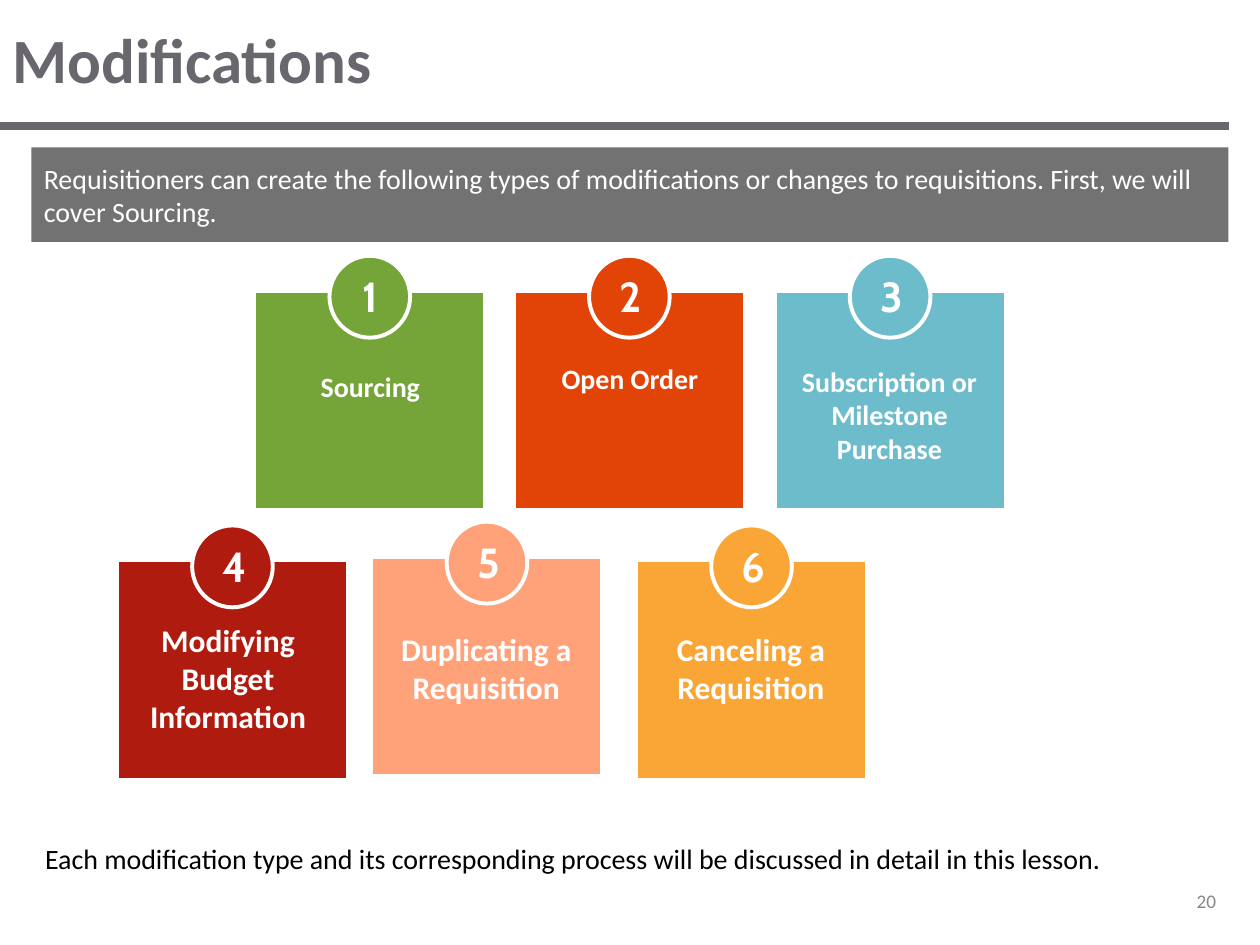
import pptx
import pptx.dml.color
import pptx.enum.shapes
import pptx.enum.text
import pptx.oxml.ns
import pptx.util
from lxml import etree

COLS, ROWS = 100, 75
SHAPE = pptx.enum.shapes.MSO_SHAPE
ALIGN = pptx.enum.text.PP_ALIGN
ANCHOR = pptx.enum.text.MSO_ANCHOR
SLIDE_W, SLIDE_H = pptx.util.Inches(10), pptx.util.Inches(7.5)
GREY = "69676D"
LABEL = {"size": 16, "bold": True, "color": "FFFFFF", "align": ALIGN.CENTER}
BIG_LABEL = {**LABEL, "size": 18}
NUMBER = {**LABEL, "size": 24, "name": "Cabin"}

# number, label, fill, column, row, label column, label row, label format
CARDS = [
    ("1", "Sourcing", "75A439", 20.2, 23.1, 21.1, 28.8, LABEL),
    ("2", "Open Order", "E24307", 40.8, 23.1, 41.7, 28.2, LABEL),
    ("3", "Subscription or Milestone Purchase", "6CBCCB", 61.5, 23.1, 62.3, 28.4, LABEL),
    ("4", "Modifying Budget Information", "B01B10", 9.3, 44.5, 9.8, 48.8, BIG_LABEL),
    ("5", "Duplicating a Requisition", "FFA279", 29.5, 44.2, 30.3, 49.5, BIG_LABEL),
    ("6", "Canceling a Requisition", "FAA636", 50.5, 44.5, 51.3, 49.5, BIG_LABEL),
]


def rgb(value):
    """Turn a hex string into a colour."""
    return pptx.dml.color.RGBColor.from_string(value)


def grid(col, row, width, height):
    """Convert grid columns and rows to slide lengths."""
    return (int(SLIDE_W * col / COLS), int(SLIDE_H * row / ROWS),
            int(SLIDE_W * width / COLS), int(SLIDE_H * height / ROWS))


def write(sp, text, fmt, anchor=ANCHOR.TOP):
    """Put one formatted paragraph into a shape."""
    tf = sp.text_frame
    tf.word_wrap = True
    tf.vertical_anchor = anchor
    p = tf.paragraphs[0]
    p.alignment = fmt.get("align", ALIGN.LEFT)
    r = p.add_run()
    r.text = text
    values = {"name": fmt.get("name", "Calibri"), "size": pptx.util.Pt(fmt["size"]),
              "bold": fmt.get("bold", False)}
    for key, value in values.items():
        setattr(r.font, key, value)
    r.font.color.rgb = rgb(fmt["color"])


def add_text(shapes, box, text, fmt, anchor=ANCHOR.TOP):
    """Add a text box on the grid."""
    write(shapes.add_textbox(*grid(*box)), text, fmt, anchor)


def add_block(shapes, kind, box, fill, line_width=0):
    """Add a filled preset shape with an optional white outline."""
    sp = shapes.add_shape(kind, *grid(*box))
    sp.shadow.inherit = False
    sp.fill.solid()
    sp.fill.fore_color.rgb = rgb(fill)
    if line_width:
        sp.line.color.rgb = rgb("FFFFFF")
        sp.line.width = pptx.util.Pt(line_width)
    else:
        sp.line.fill.background()
    return sp


def add_rule(shapes, row, width):
    """Add the thick horizontal rule below the title."""
    x, y, length, _ = grid(0, row, width, 0)
    cxn = shapes.add_connector(pptx.enum.shapes.MSO_CONNECTOR.STRAIGHT, x, y, x + length, y)
    cxn.line.color.rgb = rgb(GREY)
    cxn.line.width = pptx.util.Pt(5)
    etree.SubElement(cxn.element.spPr, pptx.oxml.ns.qn("a:effectLst"))


def add_card(s, number, label, fill, col, row, label_col, label_row, fmt):
    """Add a grouped card with a numbered badge and a label."""
    shapes = s.shapes.add_group_shape().shapes
    add_block(shapes, SHAPE.RECTANGLE, (col, row, 18.3, 17.4), fill, 2)
    add_block(shapes, SHAPE.OVAL, (col + 5.95, row - 2.8, 6.4, 6.5), fill, 2.25)
    add_text(shapes, (col + 7.4, row - 2.1, 3.6, 5), number, NUMBER)
    add_text(shapes, (label_col, label_row, 16.6, 9.1), label, fmt)


def main():
    """Build and save the slide."""
    prs = pptx.Presentation()
    prs.slide_width, prs.slide_height = SLIDE_W, SLIDE_H
    s = prs.slides.add_slide(prs.slide_layouts[6])
    add_rule(s.shapes, 10, 97.5)
    add_text(s.shapes, (0, 0, 100, 9.2), "Modifications",
             {"size": 36, "bold": True, "color": GREY}, ANCHOR.MIDDLE)
    intro = add_block(s.shapes, SHAPE.RECTANGLE, (2.5, 11.7, 95, 7.5), "727272")
    write(intro, "Requisitioners can create the following types of modifications or changes "
          "to requisitions. First, we will cover Sourcing.",
          {"size": 16, "color": "FFFFFF"}, ANCHOR.MIDDLE)
    for card in CARDS:
        add_card(s, *card)
    add_text(s.shapes, (2.6, 66.3, 97.4, 6.7),
             "Each modification type and its corresponding process will be discussed "
             "in detail in this lesson.", {"size": 16, "color": "000000"})
    add_text(s.shapes, (71.7, 69.5, 25.8, 4), "20",
             {"size": 11, "color": "888888", "align": ALIGN.RIGHT}, ANCHOR.MIDDLE)
    prs.save("out.pptx")


if __name__ == "__main__":
    main()
